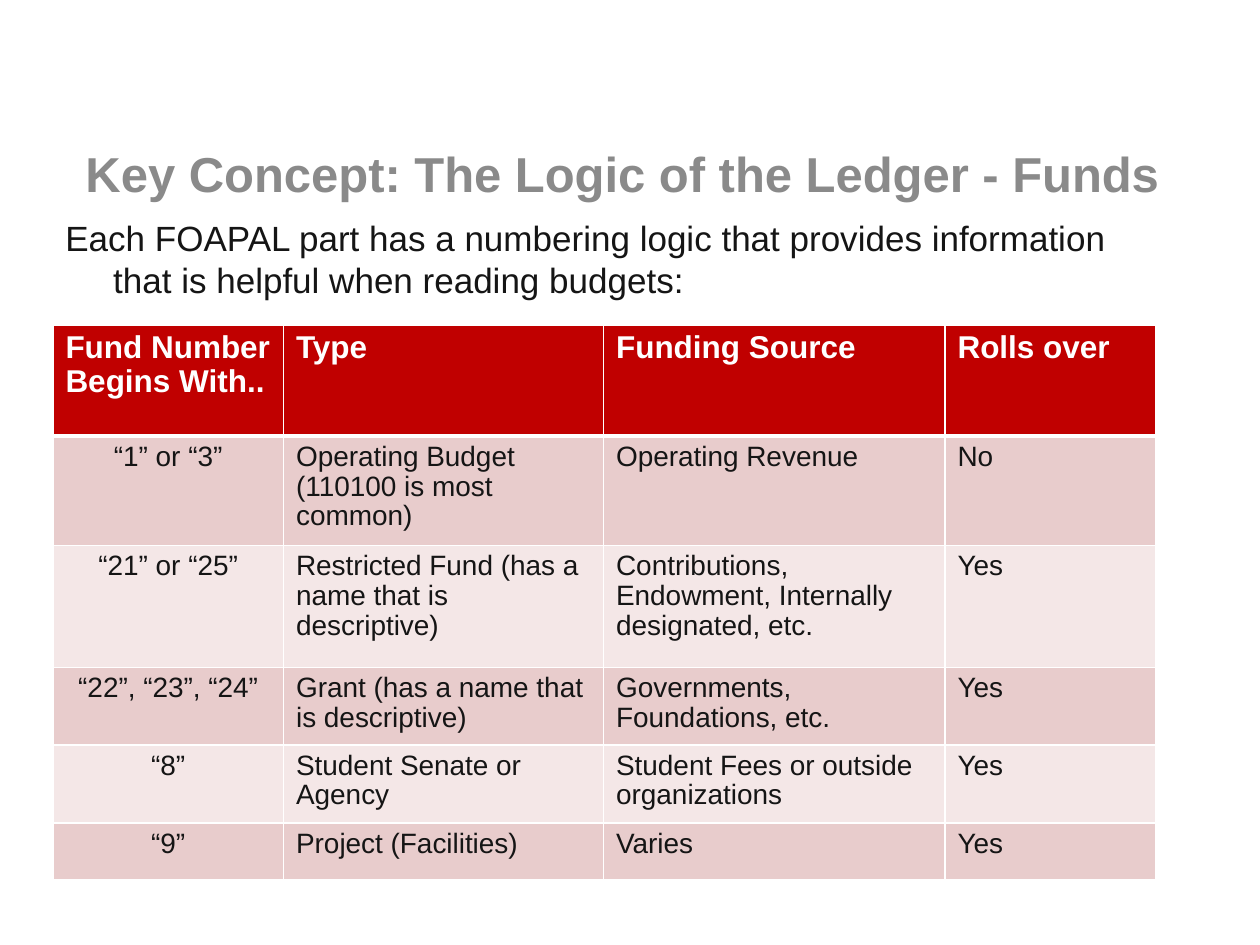
from lxml import etree
from pptx import Presentation
from pptx.dml.color import RGBColor
from pptx.enum.text import MSO_ANCHOR, PP_ALIGN
from pptx.oxml.ns import qn
from pptx.util import Inches, Pt

LEFT, CENTER = PP_ALIGN.LEFT, PP_ALIGN.CENTER
TOP, MIDDLE = MSO_ANCHOR.TOP, MSO_ANCHOR.MIDDLE

FONT = "Arial"
WHITE, GRAY, INK = "FFFFFF", "8A8A8A", "151515"
HEADER_RED, DARK_BAND, LIGHT_BAND = "C00000", "E8CCCC", "F4E7E7"

COLUMN_WIDTHS = [1.83, 2.54, 2.71, 1.67]
ROW_HEIGHTS = [0.88, 0.87, 0.97, 0.58, 0.62, 0.45]
FUND_ROWS = [
    ["Fund Number Begins With..", "Type", "Funding Source", "Rolls over"],
    ["“1” or “3”", "Operating Budget (110100 is most common)",
     "Operating Revenue", "No"],
    ["“21” or “25”", "Restricted Fund (has a name that is descriptive)",
     "Contributions, Endowment, Internally designated, etc.", "Yes"],
    ["“22”, “23”, “24”", "Grant (has a name that is descriptive)",
     "Governments, Foundations, etc.", "Yes"],
    ["“8”", "Student Senate or Agency",
     "Student Fees or outside organizations", "Yes"],
    ["“9”", "Project (Facilities)", "Varies", "Yes"],
]


def rgb(color):
    return RGBColor.from_string(color)


def write_text(frame, text, size=16, color=INK, bold=False, align=LEFT,
               line_spacing=None, hanging=0):
    para = frame.paragraphs[0]
    para.alignment = align
    para.line_spacing = line_spacing
    if hanging:
        properties = para._p.get_or_add_pPr()
        properties.set("marL", str(Inches(hanging)))
        properties.set("indent", str(-Inches(hanging)))
    span = para.add_run()
    span.text = text
    span.font.name = FONT
    span.font.size = Pt(size)
    span.font.bold = bold
    span.font.color.rgb = rgb(color)


def add_text_box(page, left, top, width, height, text, anchor=TOP, **style):
    box = page.shapes.add_textbox(Inches(left), Inches(top),
                                  Inches(width), Inches(height))
    frame = box.text_frame
    frame.word_wrap = True
    frame.vertical_anchor = anchor
    write_text(frame, text, **style)


def set_borders(cell, bottom=1, top=1):
    """Draw white lines on the four sides, with widths in points."""
    properties = cell._tc.get_or_add_tcPr()
    widths = {"a:lnL": 1, "a:lnR": 1, "a:lnT": top, "a:lnB": bottom}
    for position, (tag, width) in enumerate(widths.items()):
        line = etree.Element(qn(tag), w=str(Pt(width)))
        fill = etree.SubElement(line, qn("a:solidFill"))
        etree.SubElement(fill, qn("a:srgbClr"), val=WHITE)
        properties.insert(position, line)


def add_fund_table(page, left, top):
    frame = page.shapes.add_table(
        len(ROW_HEIGHTS), len(COLUMN_WIDTHS), Inches(left), Inches(top),
        Inches(sum(COLUMN_WIDTHS)), Inches(sum(ROW_HEIGHTS)))
    table = frame.table
    for column, width in zip(table.columns, COLUMN_WIDTHS):
        column.width = Inches(width)
    for row, height in zip(table.rows, ROW_HEIGHTS):
        row.height = Inches(height)

    for row_index, texts in enumerate(FUND_ROWS):
        is_header = row_index == 0
        band = DARK_BAND if row_index % 2 else LIGHT_BAND
        for column_index, text in enumerate(texts):
            cell = table.cell(row_index, column_index)
            cell.fill.solid()
            cell.fill.fore_color.rgb = rgb(HEADER_RED if is_header else band)
            set_borders(cell, bottom=3 if is_header else 1,
                        top=3 if row_index == 1 else 1)
            if is_header:
                style = {"size": 18, "color": WHITE, "bold": True}
            else:
                style = {"align": LEFT if column_index else CENTER}
            write_text(cell.text_frame, text, line_spacing=0.96, **style)


def main():
    deck = Presentation()
    deck.slide_width, deck.slide_height = Inches(10), Inches(7.5)
    page = deck.slides.add_slide(deck.slide_layouts[6])
    add_text_box(page, 0.58, 1.08, 8.92, 0.58,
                 "Key Concept: The Logic of the Ledger - Funds",
                 anchor=MIDDLE, size=28, color=GRAY, bold=True)
    add_text_box(page, 0.42, 1.67, 8.92, 5.03,
                 "Each FOAPAL part has a numbering logic that provides "
                 "information that is helpful when reading budgets:",
                 size=20, hanging=0.38)
    add_fund_table(page, 0.42, 2.58)
    deck.save("out.pptx")


if __name__ == "__main__":
    main()
